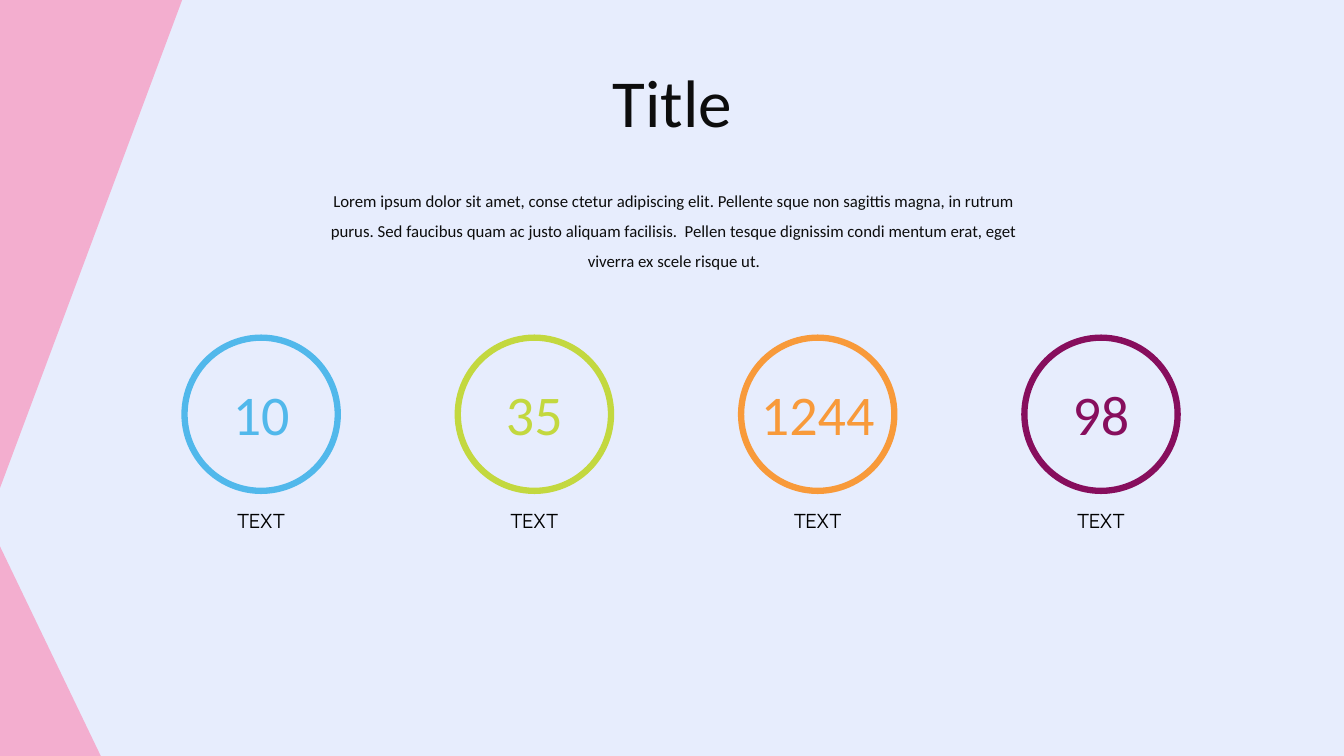
from dataclasses import dataclass

from pptx import Presentation
from pptx import util as u
from pptx.dml.color import RGBColor
from pptx.enum import shapes, text


@dataclass(frozen=True)
class Theme:
    background: str = "E7EDFD"
    pink: str = "F3AECF"
    ink: str = "0D0D0D"
    black: str = "000000"
    blue: str = "51B8EB"
    green: str = "C3D83F"
    orange: str = "F89A3A"
    purple: str = "870E5D"
    title_size: int = 48
    number_size: int = 40
    label_size: int = 14
    body_size: int = 12
    font: str = "Calibri"
    label_font: str = "Manrope"


theme = Theme()


def write_text(words, left, top, width, height, size, color,
               font=theme.font, spacing=1.0, box=None):
    area = [u.Inches(value) for value in (left, top, width, height)]
    if box is None:
        box = page.shapes.add_textbox(*area)
    box.left, box.top, box.width, box.height = area
    frame = box.text_frame
    frame.word_wrap = True
    frame.auto_size = text.MSO_AUTO_SIZE.SHAPE_TO_FIT_TEXT
    frame.vertical_anchor = text.MSO_ANCHOR.TOP
    para = frame.paragraphs[0]
    para.alignment = text.PP_ALIGN.CENTER
    para.line_spacing = spacing
    span = para.add_run()
    span.text = words
    span.font.name = font
    span.font.size = u.Pt(size)
    span.font.color.rgb = RGBColor.from_string(color)


def add_plain_shape(kind, left, top, width, height):
    shape = page.shapes.add_shape(
        kind, u.Inches(left), u.Inches(top), u.Inches(width), u.Inches(height))
    shape.shadow.inherit = False
    return shape


deck = Presentation()
deck.slide_width = u.Inches(13.33)
deck.slide_height = u.Inches(7.5)
page = deck.slides.add_slide(deck.slide_layouts[5])
page.background.fill.solid()
page.background.fill.fore_color.rgb = RGBColor.from_string(theme.background)

for top, width, height, hangs_from_top in [
    (5.42, 1, 2.08, False),
    (-0.01, 1.81, 4.85, True),
]:
    triangle = add_plain_shape(
        shapes.MSO_SHAPE.RIGHT_TRIANGLE, 0, top, width, height)
    triangle.fill.solid()
    triangle.fill.fore_color.rgb = RGBColor.from_string(theme.pink)
    triangle.line.fill.background()
    if hangs_from_top:
        triangle.rotation = 180
        triangle._element.spPr.xfrm.set("flipH", "1")

write_text("Title", 3.61, 0.55, 6.12, 0.91, size=theme.title_size,
           color=theme.ink, box=page.shapes.title)
write_text(
    "Lorem ipsum dolor sit amet, conse ctetur adipiscing elit. Pellente sque "
    "non sagittis magna, in rutrum purus. Sed faucibus quam ac justo aliquam "
    "facilisis.  Pellen tesque dignissim condi mentum erat, eget viverra ex "
    "scele risque ut.",
    3.16, 1.74, 7.05, 1.01, size=theme.body_size, color=theme.ink, spacing=1.5)

diameter = 1.52
label_width = 1.19
for number, center, number_width, color in [
    ("10", 2.59, 1.18, theme.blue),
    ("35", 5.3, 1.18, theme.green),
    ("1244", 8.11, 1.41, theme.orange),
    ("98", 10.92, 1.18, theme.purple),
]:
    ring = add_plain_shape(shapes.MSO_SHAPE.OVAL, center - diameter / 2, 3.35,
                           diameter, diameter)
    ring.fill.background()
    ring.line.color.rgb = RGBColor.from_string(color)
    ring.line.width = u.Pt(4.5)
    write_text(number, center - number_width / 2, 3.72, number_width, 0.77,
               size=theme.number_size, color=color)
    write_text("TEXT", center - label_width / 2, 5, label_width, 0.34,
               size=theme.label_size, color=theme.black, font=theme.label_font)

deck.save("out.pptx")
